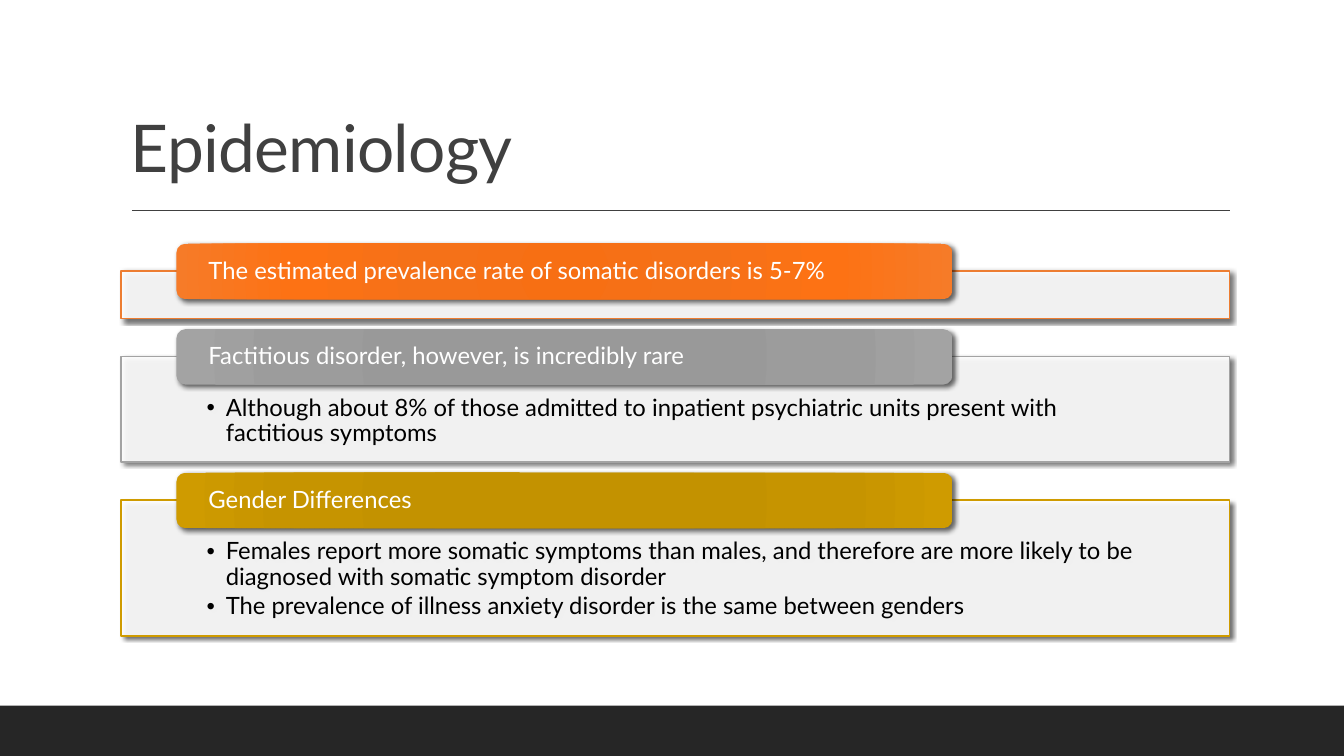
from lxml import etree
from pptx import Presentation
from pptx import util as u
from pptx.dml.color import RGBColor
from pptx.enum import shapes, text
from pptx.oxml import ns

SLIDE_W, SLIDE_H = 960, 540
LEFT, WIDTH = 86.4, 792
PANELS_TOP, PANEL_GAP = 193.5, 27
PILL_RISE, PILL_H = 19.4, 39.6
BODY = {"name": "Lato", "size": u.Pt(17)}
TOPICS = [
    ("The estimated prevalence rate of somatic disorders is 5-7%", [],
     34, "ED7D31", ["F76F13", "F57118", "FD7214", "F67B28"]),
    ("Factitious disorder, however, is incredibly rare",
     ["Although about 8% of those admitted to inpatient psychiatric units "
      "present with factitious symptoms"],
     75.6, "A3A3A3", ["989898", "999999", "9C9C9C", "A3A3A3"]),
    ("Gender Differences",
     ["Females report more somatic symptoms than males, and therefore are "
      "more likely to be diagnosed with somatic symptom disorder",
      "The prevalence of illness anxiety disorder is the same between genders"],
     97.2, "CF9B00", ["C19000", "C39200", "C69400", "CF9B00"]),
]


def rgb(hex_color):
    return RGBColor.from_string(hex_color)


def add_xml(parent, tag, **attributes):
    values = {key: str(value) for key, value in attributes.items()}
    return etree.SubElement(parent, ns.qn(tag), values)


def set_all(target, values):
    for key, value in values.items():
        setattr(target, key, value)


def set_frame(frame, insets, anchor):
    sides = ("margin_left", "margin_top", "margin_right", "margin_bottom")
    set_all(frame, {"word_wrap": True, "vertical_anchor": anchor})
    set_all(frame, {side: u.Pt(inset) for side, inset in zip(sides, insets)})


def write(paragraph, wording, font, color):
    set_all(paragraph, {"alignment": text.PP_ALIGN.LEFT, "line_spacing": 0.9})
    run = paragraph.add_run()
    run.text = wording
    set_all(run.font, font)
    run.font.color.rgb = rgb(color)
    return run


def add_block(slide, kind, box, fill):
    block = slide.shapes.add_shape(kind, *map(u.Pt, box))
    block.fill.solid()
    block.fill.fore_color.rgb = rgb(fill)
    block.line.fill.background()
    block.shadow.inherit = False
    return block


def cast_shadow(block, blur):
    effects = block._element.spPr.find(ns.qn("a:effectLst"))
    outer = add_xml(effects, "a:outerShdw", blurRad=u.Pt(blur), dist=u.Pt(2),
                    dir=45 * 60000, algn="tl", rotWithShape=0)
    add_xml(add_xml(outer, "a:srgbClr", val="000000"), "a:alpha", val=60000)


def shade(block, colors):
    properties = block._element.spPr
    gradient = etree.Element(ns.qn("a:gradFill"), rotWithShape="1")
    stops = add_xml(gradient, "a:gsLst")
    for position, color in zip((0, 34, 70, 100), colors):
        stop = add_xml(stops, "a:gs", pos=position * 1000)
        add_xml(stop, "a:srgbClr", val=color)
    circle = add_xml(gradient, "a:path", path="circle")
    add_xml(circle, "a:fillToRect", **dict.fromkeys("ltrb", 100000))
    properties.replace(properties.find(ns.qn("a:solidFill")), gradient)


def draw_heading(slide, left, top, width, height):
    heading = slide.shapes.add_textbox(*map(u.Pt, (left, top, width, height)))
    frame = heading.text_frame
    set_frame(frame, (7.2, 3.6, 7.2, 3.6), text.MSO_ANCHOR.BOTTOM)
    title = write(frame.paragraphs[0], "Epidemiology",
                  {"name": "Lato", "size": u.Pt(47)}, "404040")
    title.font._element.set("spc", "-50")
    rule_y = top + height + 13.6
    rule = slide.shapes.add_connector(
        shapes.MSO_CONNECTOR.STRAIGHT,
        *map(u.Pt, (left + 7.9, rule_y, left + width, rule_y)))
    rule.line.color.rgb = rgb("404040")
    rule.line.width = u.Pt(1)
    add_xml(rule._element.spPr, "a:effectLst")


def draw_topic(slide, left, top, width, height, topic):
    claim, details, _, outline, colors = topic
    panel = add_block(slide, shapes.MSO_SHAPE.RECTANGLE,
                      (left, top, width, height), "FFFFFF")
    white = panel._element.spPr.find(ns.qn("a:solidFill"))[0]
    add_xml(white, "a:alpha", val=90000)
    panel.line.color.rgb = rgb(outline)
    panel.line.width = u.Pt(1)
    cast_shadow(panel, 3)
    frame = panel.text_frame
    set_frame(frame, (61.2, 28.1, 61.2, 9.4), text.MSO_ANCHOR.TOP)
    for index, detail in enumerate(details):
        item = frame.add_paragraph() if index else frame.paragraphs[0]
        write(item, detail, BODY, "000000")
        item.space_after = u.Pt(2.55)
        layout = item._element.get_or_add_pPr()
        layout.set("marL", str(u.Pt(13.7)))
        layout.set("indent", str(u.Pt(-13.7)))
        add_xml(layout, "a:buFont", typeface="Arial")
        add_xml(layout, "a:buChar", char="•")

    pill = add_block(slide, shapes.MSO_SHAPE.ROUNDED_RECTANGLE,
                     (left + width * 0.05, top - PILL_RISE, width * 0.7, PILL_H),
                     colors[0])
    shade(pill, colors)
    cast_shadow(pill, 3.5)
    set_frame(pill.text_frame, (21, 0, 21, 0), text.MSO_ANCHOR.MIDDLE)
    write(pill.text_frame.paragraphs[0], claim, BODY, "FFFFFF")


def draw_topics(slide, left, top, width):
    for topic in TOPICS:
        height = topic[2]
        draw_topic(slide, left, top, width, height, topic)
        top += height + PANEL_GAP


def draw_footer(slide, left, top, width, height):
    add_block(slide, shapes.MSO_SHAPE.RECTANGLE,
              (left, top, width, height), "262626")


def main():
    deck = Presentation()
    set_all(deck, {"slide_width": u.Pt(SLIDE_W), "slide_height": u.Pt(SLIDE_H)})
    slide = deck.slides.add_slide(deck.slide_layouts[6])
    draw_heading(slide, LEFT, 22.3, WIDTH, 114.5)
    draw_footer(slide, 0, 504, SLIDE_W, 36)
    draw_topics(slide, LEFT, PANELS_TOP, WIDTH)
    deck.save("out.pptx")


if __name__ == "__main__":
    main()
